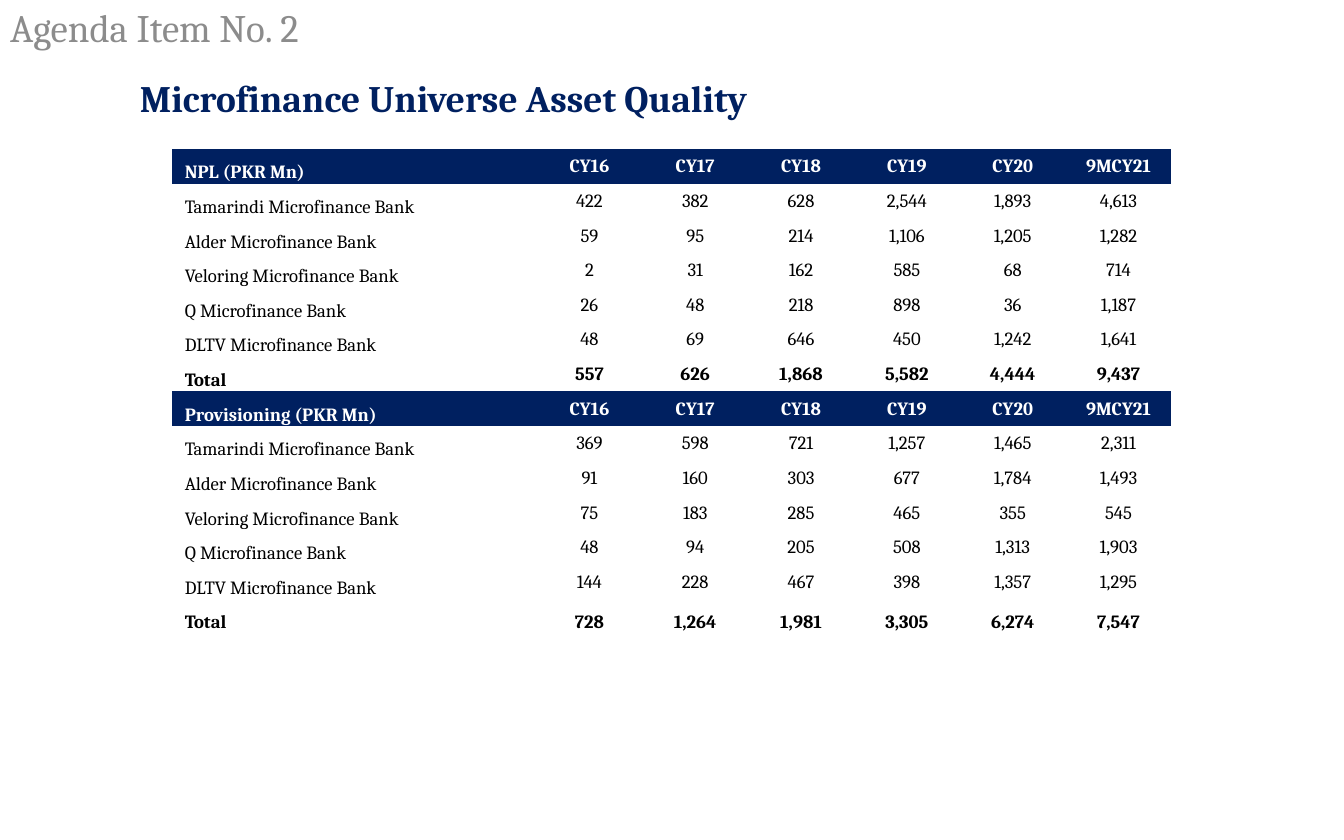
from dataclasses import dataclass

from pptx import Presentation
from pptx.dml.color import RGBColor
from pptx.enum.text import MSO_ANCHOR as Anchor, PP_ALIGN as Align
from pptx.oxml.ns import qn
from pptx.slide import Slide
from pptx.table import Table, _Cell as Cell
from pptx.text.text import TextFrame
from pptx.util import Inches, Pt


@dataclass(frozen=True)
class Theme:
    font: str = "Cambria"
    navy: str = "002060"
    white: str = "FFFFFF"
    black: str = "000000"
    grey: str = "8C8C8C"
    title_size: float = 25
    heading_size: float = 24
    cell_size: float = 12


@dataclass(frozen=True)
class Section:
    name: str
    values: tuple[tuple[int, ...], ...]  # one row per bank
    totals: tuple[int, ...]
    totals_anchor: Anchor = Anchor.MIDDLE


@dataclass(frozen=True)
class RowStyle:
    fill: str
    color: str
    bold: bool
    anchor: Anchor = Anchor.MIDDLE


THEME = Theme()
NO_GRID_STYLE = "{2D5ABB26-0587-4C30-8999-92F81FD0307C}"
PERIODS = ("CY16", "CY17", "CY18", "CY19", "CY20", "9MCY21")
BANKS = tuple(f"{name} Microfinance Bank"
              for name in ("Tamarindi", "Alder", "Veloring", "Q", "DLTV"))
SECTIONS = (
    Section(
        "NPL (PKR Mn)",
        ((422, 382, 628, 2544, 1893, 4613),
         (59, 95, 214, 1106, 1205, 1282),
         (2, 31, 162, 585, 68, 714),
         (26, 48, 218, 898, 36, 1187),
         (48, 69, 646, 450, 1242, 1641)),
        (557, 626, 1868, 5582, 4444, 9437),
    ),
    Section(
        "Provisioning (PKR Mn)",
        ((369, 598, 721, 1257, 1465, 2311),
         (91, 160, 303, 677, 1784, 1493),
         (75, 183, 285, 465, 355, 545),
         (48, 94, 205, 508, 1313, 1903),
         (144, 228, 467, 398, 1357, 1295)),
        (728, 1264, 1981, 3305, 6274, 7547),
        Anchor.BOTTOM,
    ),
)
TABLE_LEFT, TABLE_TOP, TABLE_WIDTH, TABLE_HEIGHT = 1.54, 1.33, 8.92, 4.33
NAME_WIDTH = 3.25


def write_line(frame: TextFrame, text: str, size: float, color: str,
               bold: bool = False, align: Align = Align.LEFT) -> None:
    paragraph = frame.paragraphs[0]
    paragraph.text = text
    paragraph.alignment = align
    font = paragraph.font
    font.name, font.size, font.bold = THEME.font, Pt(size), bold
    font.color.rgb = RGBColor.from_string(color)


def add_title(page: Slide) -> None:
    title = page.shapes.title
    title.left, title.top = Inches(-0.01), Inches(0.01)
    title.width, title.height = Inches(3.21), Inches(0.51)
    frame = title.text_frame
    frame.vertical_anchor = Anchor.MIDDLE
    write_line(frame, "Agenda Item No. 2", THEME.title_size, THEME.grey)
    frame.paragraphs[0].line_spacing = 0.9


def add_heading(page: Slide) -> None:
    box = page.shapes.add_textbox(Inches(1.15), Inches(0.57), Inches(6.88), Inches(0.6))
    frame = box.text_frame
    frame.word_wrap = True
    frame.vertical_anchor = Anchor.MIDDLE
    write_line(frame, "Microfinance Universe Asset Quality",
               THEME.heading_size, THEME.navy, bold=True)


def fill_cell(cell: Cell, text: str, style: RowStyle, is_name: bool) -> None:
    cell.margin_left = cell.margin_right = cell.margin_top = Inches(0.01)
    cell.margin_bottom = 0
    cell.vertical_anchor = Anchor.BOTTOM if is_name else style.anchor
    cell.fill.solid()
    cell.fill.fore_color.rgb = RGBColor.from_string(style.fill)
    write_line(cell.text_frame, text, THEME.cell_size, style.color, style.bold,
               Align.LEFT if is_name else Align.CENTER)
    if is_name:
        properties = cell.text_frame.paragraphs[0]._p.get_or_add_pPr()
        properties.set("marL", str(Inches(0.1)))


def table_rows() -> list[tuple[RowStyle, tuple[str, ...]]]:
    """Pair every row's style with its cell texts, section after section."""
    header = RowStyle(THEME.navy, THEME.white, bold=True)
    body = RowStyle(THEME.white, THEME.black, bold=False)
    rows = []
    for section in SECTIONS:
        total = RowStyle(THEME.white, THEME.black, True, section.totals_anchor)
        rows.append((header, (section.name, *PERIODS)))
        entries = [(body, bank, values) for bank, values in zip(BANKS, section.values)]
        entries.append((total, "Total", section.totals))
        rows += [(style, (name, *(f"{value:,}" for value in values)))
                 for style, name, values in entries]
    return rows


def size_grid(table: Table) -> None:
    period_width = (TABLE_WIDTH - NAME_WIDTH) / len(PERIODS)
    for index, column in enumerate(table.columns):
        column.width = Inches(period_width if index else NAME_WIDTH)
    for row in table.rows:
        row.height = Inches(TABLE_HEIGHT / len(table.rows))


def add_quality_table(page: Slide) -> None:
    rows = table_rows()
    table = page.shapes.add_table(
        len(rows), len(PERIODS) + 1, Inches(TABLE_LEFT), Inches(TABLE_TOP),
        Inches(TABLE_WIDTH), Inches(TABLE_HEIGHT)).table
    table.first_row = table.horz_banding = False
    table._tbl.tblPr.find(qn("a:tableStyleId")).text = NO_GRID_STYLE
    size_grid(table)
    for row, (style, texts) in zip(table.rows, rows):
        for index, (cell, text) in enumerate(zip(row.cells, texts)):
            fill_cell(cell, text, style, is_name=index == 0)


def main() -> None:
    deck = Presentation()
    deck.slide_width, deck.slide_height = Inches(12), Inches(7.5)
    page = deck.slides.add_slide(deck.slide_layouts.get_by_name("Title Only"))
    add_title(page)
    add_heading(page)
    add_quality_table(page)
    deck.save("out.pptx")


if __name__ == "__main__":
    main()
